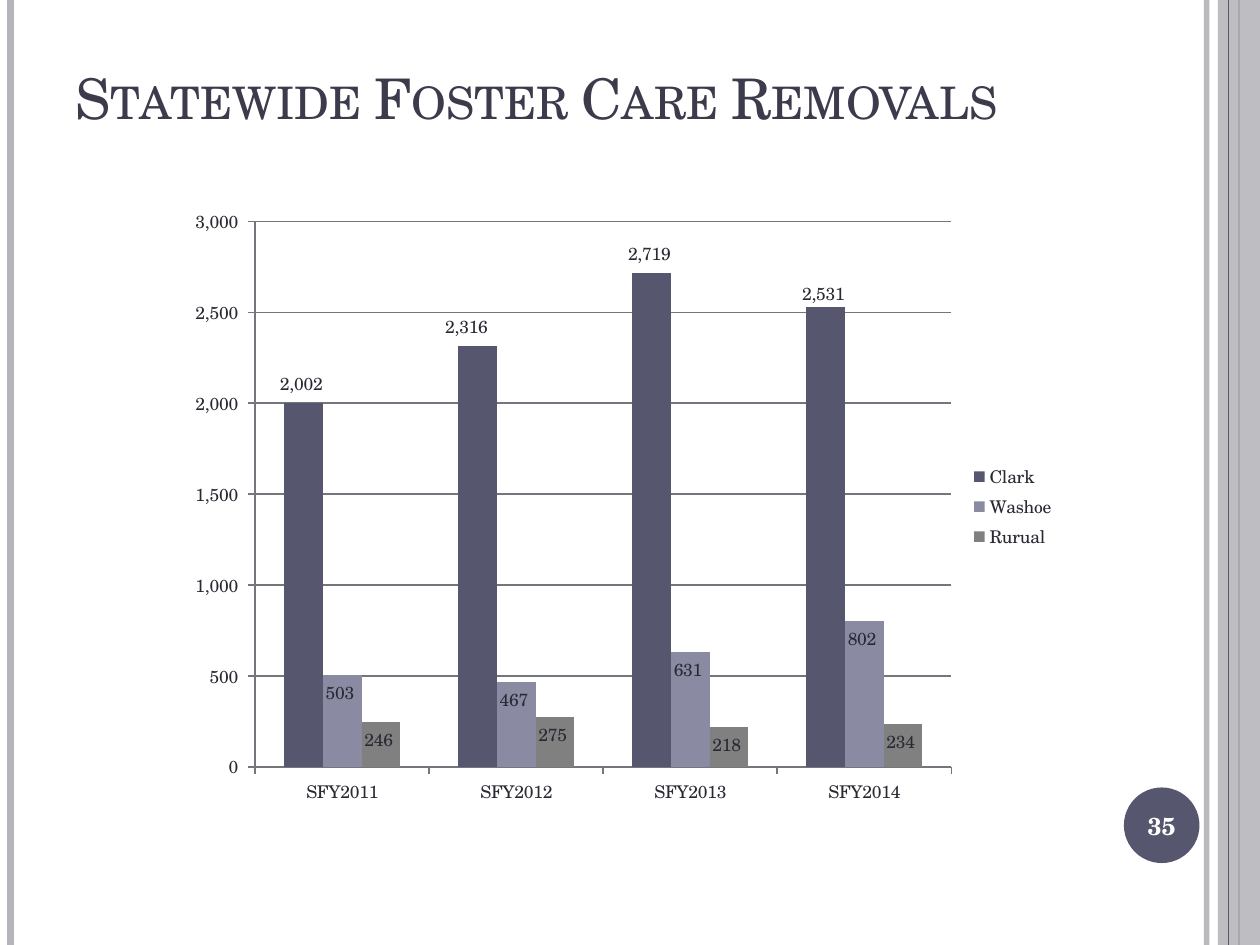
import pptx
import pptx.chart.data
import pptx.dml.color
import pptx.enum.chart
import pptx.enum.shapes
import pptx.enum.text
import pptx.oxml
import pptx.oxml.ns
import pptx.util

Pt = pptx.util.Pt
FONT = "TeX Gyre Schola"
INK, PALE, TEXT = "56566E", "B4B4BA", "292934"
WIDTH, HEIGHT = 720, 540
NUMBER_FORMAT = "#,##0_);[Red]\\(#,##0\\)"


def color(value):
    return pptx.dml.color.RGBColor.from_string(value)


def set_font(font, size, value, bold=False):
    font.name = FONT
    font.size = Pt(size)
    font.bold = bold
    font.color.rgb = color(value)


def add_element(parent, tag, **attributes):
    element = parent.makeelement(pptx.oxml.ns.qn(tag), attributes)
    parent.append(element)
    return element


def set_opacity(fill_parent, percent):
    shade = next(fill_parent.iter(pptx.oxml.ns.qn("a:srgbClr")))
    add_element(shade, "a:alpha", val=str(percent * 1000))


def add_rule(page, x, width, value, opacity=100):
    rule = page.shapes.add_connector(
        pptx.enum.shapes.MSO_CONNECTOR.STRAIGHT, Pt(x), Pt(0), Pt(x), Pt(HEIGHT))
    rule.line.color.rgb = color(value)
    rule.line.width = Pt(width)
    properties = rule._element.spPr
    if opacity < 100:
        set_opacity(properties, opacity)
    add_element(properties, "a:effectLst")


def add_plain_shape(page, kind, left, top, width, height, value):
    shape = page.shapes.add_shape(kind, Pt(left), Pt(top), Pt(width), Pt(height))
    shape.shadow.inherit = False
    shape.fill.solid()
    shape.fill.fore_color.rgb = color(value)
    shape.line.fill.background()
    return shape


def add_side_bands(page):
    add_rule(page, 689.5, 3, PALE, 93)
    add_rule(page, 6, 4.5, PALE)
    add_rule(page, 708, 1.5, INK)
    band = add_plain_shape(page, pptx.enum.shapes.MSO_SHAPE.RECTANGLE,
                           696, 0, WIDTH - 696, HEIGHT, PALE)
    set_opacity(band._element.spPr, 87)
    add_rule(page, 702, 0.75, INK)


def add_page_number(page, left, top, size, number):
    add_plain_shape(page, pptx.enum.shapes.MSO_SHAPE.OVAL, left, top, size, size, INK)
    box = page.shapes.add_textbox(Pt(left - 2.4), Pt(top + 1.2), Pt(size + 4.8), Pt(size - 2.4))
    frame = box.text_frame
    frame.word_wrap = True
    frame.vertical_anchor = pptx.enum.text.MSO_ANCHOR.MIDDLE
    para = frame.paragraphs[0]
    para.text = number
    para.alignment = pptx.enum.text.PP_ALIGN.CENTER
    set_font(para.font, 14, "FFFFFF", True)


def place_title(page, left, top, width, height, text):
    title = page.shapes.title
    title.left, title.top, title.width, title.height = map(Pt, (left, top, width, height))
    frame = title.text_frame
    frame.word_wrap = True
    frame.auto_size = pptx.enum.text.MSO_AUTO_SIZE.NONE
    frame.vertical_anchor = pptx.enum.text.MSO_ANCHOR.BOTTOM
    para = frame.paragraphs[0]
    para.alignment = pptx.enum.text.PP_ALIGN.LEFT
    span = para.add_run()
    span.text = text
    set_font(span.font, 32, "3B3B4B")
    span.font._element.set("cap", "small")


def make_layout(parent, x, y, width=None, height=None):
    layout = parent.makeelement(pptx.oxml.ns.qn("c:layout"), {})
    manual = add_element(layout, "c:manualLayout")
    if width is not None:
        add_element(manual, "c:layoutTarget", val="inner")
        add_element(manual, "c:xMode", val="edge")
        add_element(manual, "c:yMode", val="edge")
    for tag, value in (("x", x), ("y", y), ("w", width), ("h", height)):
        if value is not None:
            add_element(manual, f"c:{tag}", val=str(value))
    return layout


def lift_label(point, x, y):
    label = point.data_label
    set_font(label.font, 10, TEXT)
    label.position = pptx.enum.chart.XL_LABEL_POSITION.INSIDE_END
    element = label._dLbl
    element.insert(1, make_layout(element, x, y))


def style_axis(axis):
    axis.major_tick_mark = pptx.enum.chart.XL_TICK_MARK.OUTSIDE
    axis.minor_tick_mark = pptx.enum.chart.XL_TICK_MARK.NONE
    axis.format.line.color.rgb = color("75757E")
    axis.format.line.width = Pt(1)
    set_font(axis.tick_labels.font, 10, TEXT)


def add_removals_chart(page, left, top, width, height):
    data = pptx.chart.data.CategoryChartData(number_format=NUMBER_FORMAT)
    data.categories = ["SFY2011", "SFY2012", "SFY2013", "SFY2014"]
    data.add_series("Clark ", (2002, 2316, 2719, 2531))
    data.add_series("Washoe", (503, 467, 631, 802))
    data.add_series("Rurual", (246, 275, 218, 234))
    chart = page.shapes.add_chart(
        pptx.enum.chart.XL_CHART_TYPE.COLUMN_CLUSTERED,
        Pt(left), Pt(top), Pt(width), Pt(height), data).chart
    set_font(chart.font, 10, TEXT)
    chart.has_title = False
    chart.has_legend = True
    chart.legend.position = pptx.enum.chart.XL_LEGEND_POSITION.RIGHT
    chart.legend.include_in_layout = False
    set_font(chart.legend.font, 10, TEXT)

    style_axis(chart.category_axis)
    values = chart.value_axis
    style_axis(values)
    values.minimum_scale, values.maximum_scale, values.major_unit = 0, 3000, 500
    values.tick_labels.number_format = NUMBER_FORMAT
    values.tick_labels.number_format_is_linked = False
    values.has_major_gridlines = True
    values.major_gridlines.format.line.color.rgb = color("75757E")
    values.major_gridlines.format.line.width = Pt(1)

    plot = chart.plots[0]
    plot.gap_width, plot.overlap = 150, 0
    plot.vary_by_categories = False
    for series, value in zip(plot.series, (INK, "8A8AA3", "808080")):
        series.format.fill.solid()
        series.format.fill.fore_color.rgb = color(value)
        labels = series.data_labels
        labels.show_value = True
        labels.position = pptx.enum.chart.XL_LABEL_POSITION.INSIDE_END
        labels.number_format = NUMBER_FORMAT
        labels.number_format_is_linked = False
        set_font(labels.font, 10, TEXT)
    offsets = ((0, -0.06), (-0.01, -0.06), (0, -0.06), (0, -0.05))
    for index, offset in enumerate(offsets):
        lift_label(plot.series[0].points[index], *offset)

    area = chart._chartSpace.chart.plotArea
    for old in area.findall(pptx.oxml.ns.qn("c:layout")):
        area.remove(old)
    area.insert(0, make_layout(area, 0.09, 0.04, 0.78, 0.88))


def main():
    deck = pptx.Presentation()
    deck.slide_width, deck.slide_height = Pt(WIDTH), Pt(HEIGHT)
    page = deck.slides.add_slide(deck.slide_layouts[5])
    add_side_bands(page)
    place_title(page, 36, 34, 588, 44.5, "Statewide Foster Care Removals")
    add_removals_chart(page, 100, 112.5, 510, 354)
    add_page_number(page, 642.25, 450, 43.2, "35")
    deck.save("out.pptx")


if __name__ == "__main__":
    main()
